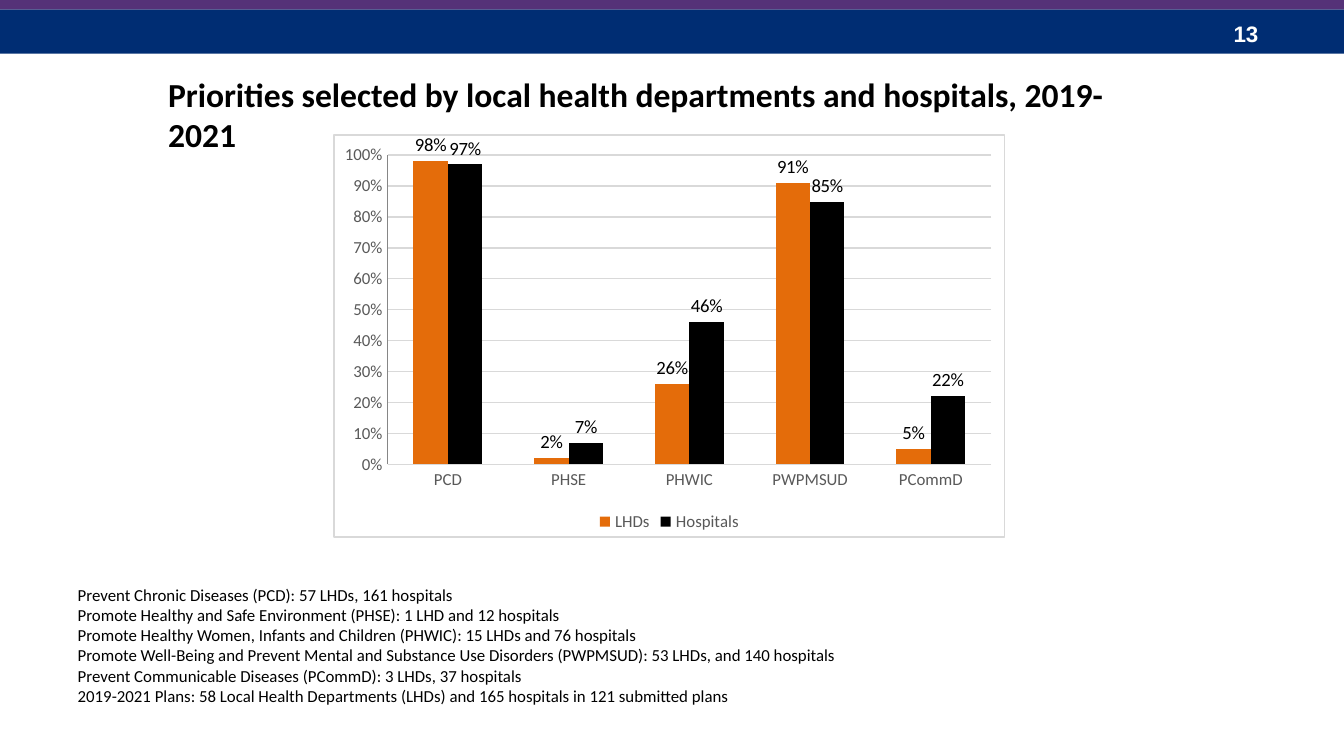
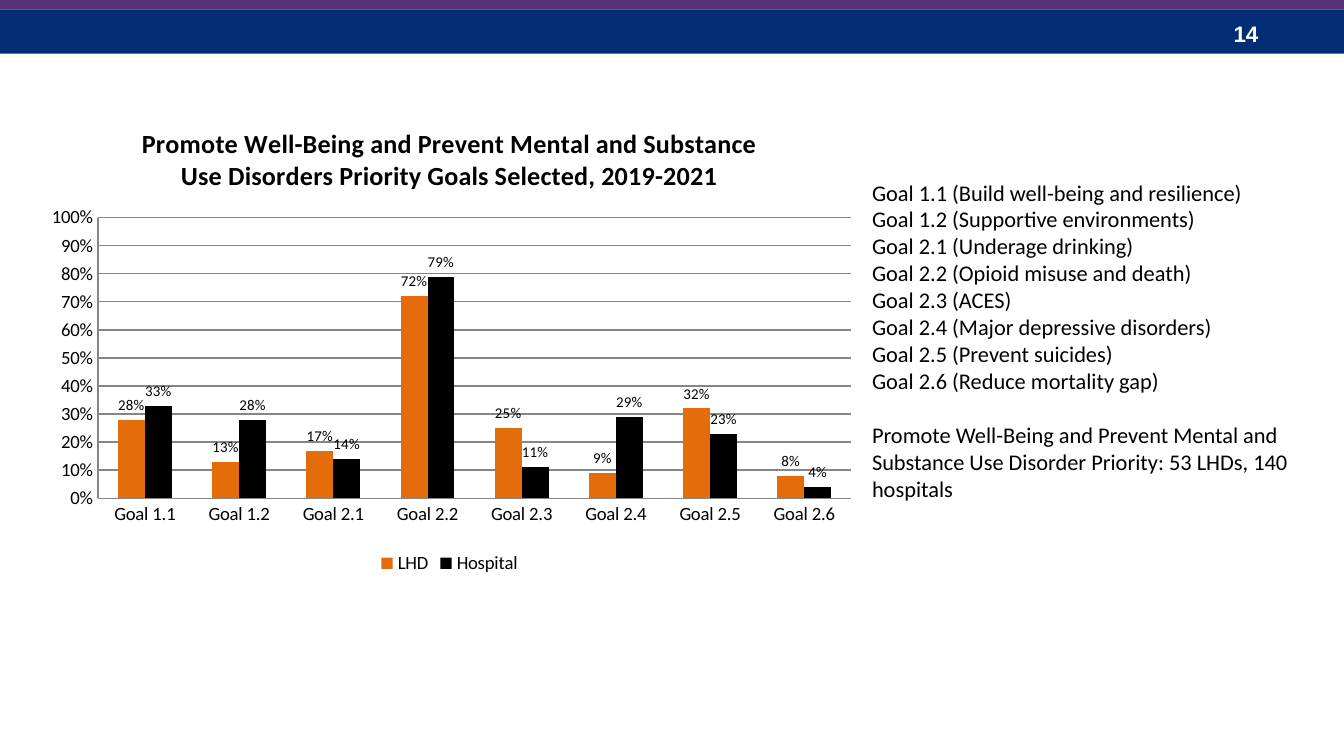
from lxml.etree import SubElement
from pptx import Presentation
from pptx.chart.data import CategoryChartData
from pptx.dml.color import RGBColor
from pptx.enum.chart import XL_CHART_TYPE, XL_LABEL_POSITION, XL_LEGEND_POSITION, XL_TICK_MARK
from pptx.enum.shapes import MSO_SHAPE
from pptx.enum.text import MSO_ANCHOR, MSO_AUTO_SIZE, PP_ALIGN
from pptx.oxml.ns import qn
from pptx.util import Inches, Pt

COLORS = {
    "navy": "002D73",
    "purple": "553278",
    "orange": "E46C0A",
    "black": "000000",
    "white": "FFFFFF",
    "label": "595959",
    "pale": "D9D9D9",
    "grid": "868686",
}
TITLE_ONLY, BLANK = 5, 6
BODY_FONT = "Calibri"
PERCENT = "0%"
BANDS = [("navy", (0, 0.07, 10, 0.33)), ("purple", (0, -0.02, 10, 0.09))]

PRIORITY_NOTES = [
    "Prevent Chronic Diseases (PCD): 57 LHDs, 161 hospitals",
    "Promote Healthy and Safe Environment (PHSE): 1 LHD and 12 hospitals",
    "Promote Healthy Women, Infants and Children (PHWIC): 15 LHDs and 76 hospitals",
    "Promote Well-Being and Prevent Mental and Substance Use Disorders (PWPMSUD): 53 LHDs, and 140 hospitals",
    "Prevent Communicable Diseases (PCommD): 3 LHDs, 37 hospitals",
    "2019-2021 Plans: 58 Local Health Departments (LHDs) and 165 hospitals in 121 submitted plans",
]
PRIORITIES = ["PCD", "PHSE", "PHWIC", "PWPMSUD", "PCommD"]
PRIORITY_SHARES = {
    "LHDs": [0.98, 0.02, 0.26, 0.91, 0.05],
    "Hospitals": [0.97, 0.07, 0.46, 0.85, 0.22],
}
GOALS = {
    "Goal 1.1": "Build well-being and resilience",
    "Goal 1.2": "Supportive environments",
    "Goal 2.1": "Underage drinking",
    "Goal 2.2": "Opioid misuse and death",
    "Goal 2.3": "ACES",
    "Goal 2.4": "Major depressive disorders",
    "Goal 2.5": "Prevent suicides",
    "Goal 2.6": "Reduce mortality gap",
}
GOAL_SHARES = {
    "LHD": [0.28, 0.13, 0.17, 0.72, 0.25, 0.09, 0.32, 0.08],
    "Hospital": [0.33, 0.28, 0.14, 0.79, 0.11, 0.29, 0.23, 0.04],
}


def rgb(name):
    return RGBColor.from_string(COLORS[name])


def inches(box):
    return [Inches(length) for length in box]


def set_values(target, values):
    for attribute, value in values.items():
        setattr(target, attribute, value)


def style_font(font, size, color="black", name=BODY_FONT, bold=False):
    set_values(font, {"size": Pt(size), "name": name, "bold": bold})
    font.color.rgb = rgb(color)


def style_line(line, color):
    line.color.rgb = rgb(color)
    line.width = Pt(0.75)


def fill_text(frame, lines, anchor=MSO_ANCHOR.TOP, **font_values):
    set_values(frame, {"word_wrap": True, "auto_size": MSO_AUTO_SIZE.NONE,
                       "vertical_anchor": anchor})
    frame.text = "\n".join(lines)
    for para in frame.paragraphs:
        para.alignment = PP_ALIGN.LEFT
        for span in para.runs:
            style_font(span.font, **font_values)


def add_text(page, box, lines, **format_values):
    frame = page.shapes.add_textbox(*inches(box)).text_frame
    fill_text(frame, lines, **format_values)
    return frame


def add_page(deck, layout, number):
    """Add a slide with the header bands and its page number."""
    page = deck.slides.add_slide(deck.slide_layouts[layout])
    for color, box in BANDS:
        band = page.shapes.add_shape(MSO_SHAPE.RECTANGLE, *inches(box))
        band.shadow.inherit = False
        band.fill.solid()
        band.fill.fore_color.rgb = rgb(color)
        band.line.fill.background()
    add_text(page, (9.08, 0.1, 0.75, 0.3), [str(number)], anchor=MSO_ANCHOR.MIDDLE,
             size=12, color="white", name="Arial", bold=True)
    return page


def add_title(page, box, text):
    title = page.shapes.title
    title.left, title.top, title.width, title.height = inches(box)
    fill_text(title.text_frame, [text], size=18, bold=True)


def place_plot(chart, fractions):
    """Fix the inner plot area, given as fractions of the chart."""
    plot_area = chart.element.find(qn("c:chart")).find(qn("c:plotArea"))
    for old_layout in plot_area.findall(qn("c:layout")):
        plot_area.remove(old_layout)
    layout = SubElement(plot_area, qn("c:layout"))
    plot_area.insert(0, layout)
    manual = SubElement(layout, qn("c:manualLayout"))
    settings = {"layoutTarget": "inner", "xMode": "edge", "yMode": "edge"}
    settings.update(zip("xywh", fractions))
    for tag, value in settings.items():
        SubElement(manual, qn("c:" + tag)).set("val", str(value))


def add_paint(parent, color):
    """Append a solid fill, or no fill when the colour is None."""
    if color:
        SubElement(SubElement(parent, qn("a:solidFill")), qn("a:srgbClr"), val=COLORS[color])
    else:
        SubElement(parent, qn("a:noFill"))


def frame_chart(chart, fill, border):
    properties = SubElement(chart.element, qn("c:spPr"))
    chart.element.find(qn("c:chart")).addnext(properties)
    add_paint(properties, fill)
    add_paint(SubElement(properties, qn("a:ln"), w=str(Pt(0.75))), border)


def add_share_chart(page, box, categories, shares, plot, axis_size=10, axis_color="black",
                    label_size=10, grid="grid", fill=None, border=None):
    data = CategoryChartData(number_format=PERCENT)
    data.categories = categories
    for name, values in shares.items():
        data.add_series(name, values)
    chart = page.shapes.add_chart(XL_CHART_TYPE.COLUMN_CLUSTERED, *inches(box), data).chart
    style_font(chart.font, 10)
    chart.has_title = False
    chart.has_legend = True
    set_values(chart.legend, {"position": XL_LEGEND_POSITION.BOTTOM, "include_in_layout": False})
    style_font(chart.legend.font, axis_size, axis_color)

    category_axis, value_axis = chart.category_axis, chart.value_axis
    for axis, line_color in ((category_axis, grid), (value_axis, "grid")):
        axis.major_tick_mark = axis.minor_tick_mark = XL_TICK_MARK.NONE
        style_font(axis.tick_labels.font, axis_size, axis_color)
        style_line(axis.format.line, line_color)
    set_values(value_axis, {"minimum_scale": 0, "maximum_scale": 1, "major_unit": 0.1,
                            "has_major_gridlines": True})
    percent_format = {"number_format": PERCENT, "number_format_is_linked": False}
    set_values(value_axis.tick_labels, percent_format)
    style_line(value_axis.major_gridlines.format.line, grid)

    bars = chart.plots[0]
    set_values(bars, {"gap_width": 150, "overlap": 0, "vary_by_categories": False})
    for series, color in zip(bars.series, ("orange", "black")):
        series.format.fill.solid()
        series.format.fill.fore_color.rgb = rgb(color)
        labels = series.data_labels
        set_values(labels, {"show_value": True, "position": XL_LABEL_POSITION.OUTSIDE_END,
                            **percent_format})
        style_font(labels.font, label_size)
    place_plot(chart, plot)
    frame_chart(chart, fill, border)
    return chart


def build_priorities(deck):
    page = add_page(deck, TITLE_ONLY, 13)
    add_text(page, (0.48, 4.3, 6.21, 1.01), PRIORITY_NOTES, size=9)
    add_title(page, (1.15, 0.5, 7.66, 0.4),
              "Priorities selected by local health departments and hospitals, 2019-2021")
    add_share_chart(page, (2.48, 1, 5, 3), PRIORITIES, PRIORITY_SHARES, (0.08, 0.05, 0.9, 0.77),
                    axis_size=9, axis_color="label", grid="pale", fill="white", border="pale")


def build_goals(deck):
    page = add_page(deck, BLANK, 14)
    lines = [f"{goal} ({meaning})" for goal, meaning in GOALS.items()]
    lines.append("Promote Well-Being and Prevent Mental and Substance Use Disorder Priority: "
                 "53 LHDs, 140 hospitals")
    frame = add_text(page, (6.39, 1.28, 3.36, 2.52), lines, size=12)
    frame.paragraphs[-1].space_before = Pt(14.6)
    chart = add_share_chart(page, (0.23, 0.77, 6.23, 3.54), list(GOALS), GOAL_SHARES,
                            (0.08, 0.24, 0.9, 0.59), label_size=8)
    chart.has_title = True
    chart.chart_title.include_in_layout = False
    title = chart.chart_title.text_frame
    title.text = ("Promote Well-Being and Prevent Mental and Substance Use Disorders "
                  "Priority Goals Selected, 2019-2021")
    style_font(title.paragraphs[0].runs[0].font, 14, bold=True)


def main():
    deck = Presentation()
    deck.slide_width = Inches(10)
    deck.slide_height = deck.slide_width * 9 // 16
    build_priorities(deck)
    build_goals(deck)
    deck.save("out.pptx")


if __name__ == "__main__":
    main()
